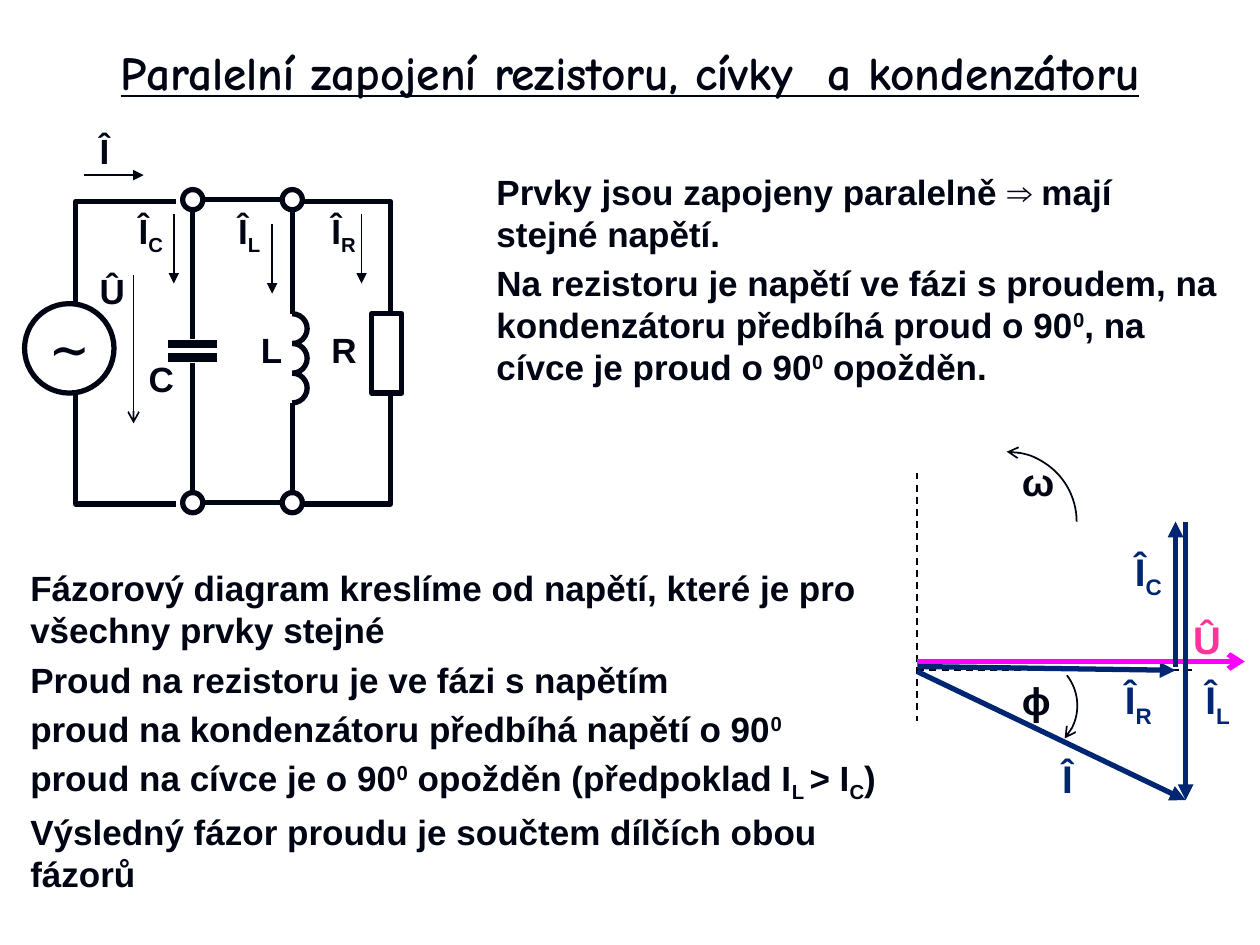
"""Builds a slide on a parallel resistor, coil and capacitor with its phasor diagram."""
from lxml import etree
from pptx import Presentation, util as u
from pptx.dml.color import RGBColor
from pptx.enum import dml, shapes, text
from pptx.oxml.ns import qn

INK = RGBColor(0x00, 0x05, 0x14)
NAVY = RGBColor(0x00, 0x26, 0x73)
MAGENTA = RGBColor(0xFF, 0x00, 0xFF)
PINK = RGBColor(0xFF, 0x33, 0x99)
SHAPE = shapes.MSO_SHAPE
ALIGN = text.PP_ALIGN
ANCHOR = text.MSO_ANCHOR
BASELINES = {"^": "30000", "_": "-25000"}


def write(frame, lines, size=20, color=INK, font="Arial", align=ALIGN.LEFT,
          anchor=ANCHOR.TOP, wrap=False, inset=0.04, before=0, underline=None):
    frame.word_wrap = wrap
    frame.vertical_anchor = anchor
    frame.margin_left = frame.margin_right = u.Inches(inset)
    frame.margin_top = frame.margin_bottom = u.Inches(inset)
    for index, line in enumerate(lines):
        paragraph = frame.add_paragraph() if index else frame.paragraphs[0]
        paragraph.alignment = align
        paragraph.space_before = u.Pt(before)
        for piece in line.split("|"):
            run = paragraph.add_run()
            run.text = piece.lstrip("^_")
            run.font.name, run.font.size = font, u.Pt(size)
            run.font.bold, run.font.underline = True, underline
            run.font.color.rgb = color
            if piece[0] in BASELINES:
                run._r.get_or_add_rPr().set("baseline", BASELINES[piece[0]])


def stroke(part, width=3, color=INK, dash=None, **ends):
    part.line.color.rgb = color
    part.line.width = u.Pt(width)
    if dash:
        part.line.dash_style = dash
    outline = part.line._get_or_add_ln()
    for end, kind in ends.items():
        etree.SubElement(outline, qn(f"a:{end}")).set("type", kind)
    etree.SubElement(part._element.spPr, qn("a:effectLst"))
    if hasattr(part, "fill"):
        part.fill.background()


deck = Presentation()
deck.slide_width, deck.slide_height = u.Inches(10), u.Inches(7.5)
CELL = deck.slide_width // 100
slide = deck.slides.add_slide(deck.slide_layouts[5])
canvas = slide.shapes

title = canvas.title
title.left, title.top, title.width, title.height = (
    int(n * CELL) for n in (1.2, 2.1, 97.6, 7.1))
write(title.text_frame, ["Paralelní zapojení rezistoru, cívky  a kondenzátoru"], size=27,
      font="Comic Neue", align=ALIGN.CENTER, anchor=ANCHOR.MIDDLE, wrap=True, underline=True)

explanations = [
    ((39, 13.1, 58.3, 18.1), [
        "Prvky jsou zapojeny paralelně ⇒ mají stejné napětí.",
        "Na rezistoru je napětí ve fázi s proudem, na kondenzátoru předbíhá proud o 90|^0|"
        ", na cívce je proud o 90|^0| opožděn."]),
    ((2, 44.6, 68.5, 27), [
        "Fázorový diagram kreslíme od napětí, které je pro všechny prvky stejné",
        "Proud na rezistoru je ve fázi s napětím",
        "proud na kondenzátoru předbíhá napětí o 90|^0",
        "proud na cívce je o 90|^0| opožděn (předpoklad I|_L |> I|_C|)",
        "Výsledný fázor proudu je součtem dílčích obou fázorů"]),
]
for place, lines in explanations:
    box = canvas.add_textbox(*(int(n * CELL) for n in place))
    write(box.text_frame, lines, wrap=True, before=4)

SOURCE, CAPACITOR, COIL, RESISTOR = 5.5, 15.3, 23.2, 30.7
TOP, BOTTOM = 15.85, 39.9
NODE, TURN = 0.8, 2.36
COIL_TOP = 24.9
COIL_END = COIL_TOP + 3 * TURN
ORIGIN, AXIS = 72.8, 53.2

wire = {}
plate = {"width": 5}
guide = {"width": 1, "dash": dml.MSO_LINE.DASH}
current = {"width": 1, "tailEnd": "triangle"}
voltage = {"width": 1, "tailEnd": "arrow"}
phasor = {"color": NAVY, "tailEnd": "triangle"}
lines = [
    (ORIGIN, 37.5, ORIGIN, 57.2, guide),
    (ORIGIN, AXIS, 94.9, AXIS, guide),
    (ORIGIN, 52.9, 93.3, AXIS, phasor),
    (ORIGIN, 52.5, 98.8, 52.5, {"color": MAGENTA, "tailEnd": "arrow"}),
    (93.3, 52.9, 93.3, 41.4, phasor),
    (ORIGIN, 53.3, 94.1, 63.5, phasor),
    (94.1, 41.4, 94.1, 63.5, phasor),
    (10.6, 21.8, 10.6, 33.6, voltage),
    (6.7, 13.9, 11.4, 13.9, current),
    (13.8, 17, 13.8, 22.5, current),
    (21.6, 17.8, 21.6, 23.3, current),
    (28.7, 17, 28.7, 22.5, current),
    (CAPACITOR, TOP + NODE, CAPACITOR, 26.9, wire),
    (CAPACITOR, 28.8, CAPACITOR, BOTTOM - NODE, wire),
    (CAPACITOR - 1.95, 27.3, CAPACITOR + 1.95, 27.3, plate),
    (CAPACITOR - 1.95, 28.4, CAPACITOR + 1.95, 28.4, plate),
    (COIL, COIL_TOP, COIL, TOP + NODE, wire),
    (COIL, COIL_END, COIL, BOTTOM - NODE, wire),
    (CAPACITOR + NODE, TOP, COIL - NODE, TOP, wire),
    (CAPACITOR + NODE, BOTTOM, COIL - NODE, BOTTOM, wire),
]
for *ends, style in lines:
    connector = canvas.add_connector(shapes.MSO_CONNECTOR.STRAIGHT,
                                     *(int(n * CELL) for n in ends))
    stroke(connector, **style)

corners = [
    (SOURCE, 24.1, CAPACITOR - NODE, TOP),
    (SOURCE, 31.2, CAPACITOR - NODE, BOTTOM),
    (RESISTOR, 24.9, COIL + NODE, TOP),
    (RESISTOR, 31.2, COIL + NODE, BOTTOM),
]
for column, start, node, rail in corners:
    corner = canvas.build_freeform(column, start, scale=CELL)
    corner.add_line_segments([(column, rail), (node, rail)], close=False)
    stroke(corner.convert_to_shape())

outlines = [(SHAPE.OVAL, node, rail, 2 * NODE, 2 * NODE)
            for node in (CAPACITOR, COIL) for rail in (TOP, BOTTOM)]
outlines += [(SHAPE.RECTANGLE, RESISTOR, 28.05, 2.4, 6.3),
             (SHAPE.OVAL, SOURCE, 27.65, 7.1, 7.1)]
for kind, x, y, width, height in outlines:
    component = canvas.add_shape(kind, *(int(n * CELL) for n in (
        x - width / 2, y - height / 2, width, height)))
    stroke(component)
write(component.text_frame, ["∼"], size=28, font="Times New Roman",
      align=ALIGN.CENTER, anchor=ANCHOR.MIDDLE)

arcs = [(COIL, COIL_TOP + (turn + 0.5) * TURN, TURN / 2, 270, 90, wire) for turn in range(3)]
arcs += [(79.9, 41.4, 5.55, 270, 0, {"width": 1, "headEnd": "arrow"}),
         (81.6, 56, 3.9, 322, 42, voltage)]
for x, y, radius, start, stop, style in arcs:
    arc = canvas.add_shape(SHAPE.ARC, *(int(n * CELL) for n in (
        x - radius, y - radius, 2 * radius, 2 * radius)))
    arc.adjustments[0], arc.adjustments[1] = start * 0.6, stop * 0.6
    stroke(arc, **style)

circuit = {}
diagram = {"size": 22, "align": ALIGN.RIGHT, "anchor": ANCHOR.MIDDLE}
navy_label = {**diagram, "color": NAVY}
labels = [
    ("Î", 7.5, 9.9, 1.6, circuit),
    ("Û", 7.5, 21, 2.8, circuit),
    ("C", 11.4, 28, 2.8, circuit),
    ("L", 20.3, 25.7, 2.5, circuit),
    ("R", 25.9, 25.7, 2.8, circuit),
    ("Î|_C", 10.6, 16.2, 2.9, circuit),
    ("Î|_L", 18.5, 16.2, 2.7, circuit),
    ("Î|_R", 25.9, 16.2, 2.9, circuit),
    ("ω", 80.7, 35.9, 2.9, diagram),
    ("ϕ", 80.7, 53.3, 2.6, diagram),
    ("Û", 94.3, 48.5, 3, {**diagram, "color": PINK}),
    ("Î", 83.9, 59.5, 1.6, navy_label),
    ("Î|_C", 89.4, 43.3, 3.2, navy_label),
    ("Î|_R", 88.6, 53.5, 3.2, navy_label),
    ("Î|_L", 95.1, 53.5, 2.9, navy_label),
]
for symbol, x, y, width, style in labels:
    box = canvas.add_textbox(*(int(n * CELL) for n in (x, y, width, 4.5 if style else 4.1)))
    write(box.text_frame, [symbol], **style)

deck.save("out.pptx")
